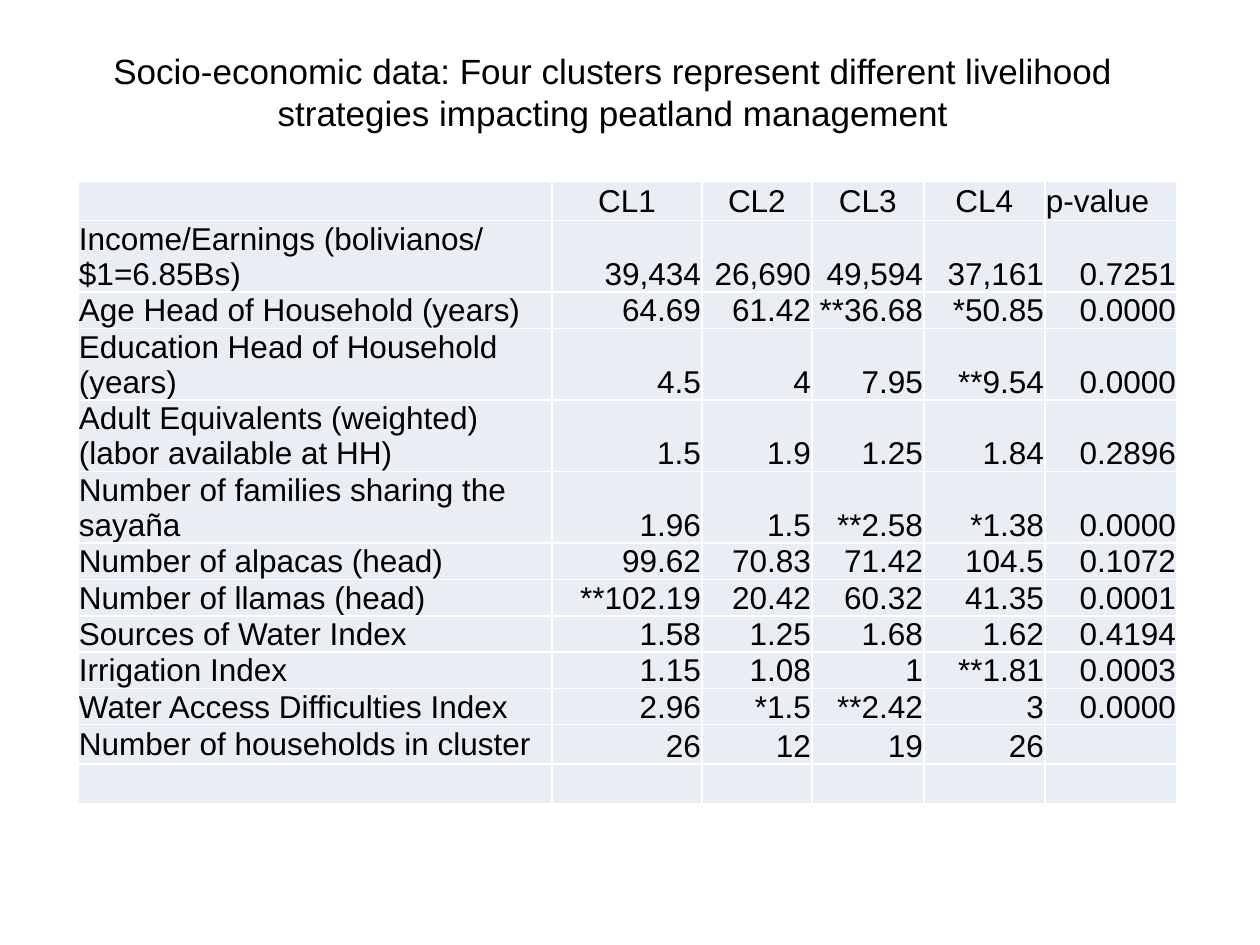
from lxml import etree
from pptx import Presentation
from pptx import util as u
from pptx.dml.color import RGBColor
from pptx.enum import text
from pptx.oxml.ns import qn

PX = 914400 // 126  # one pixel in EMU


def color(value):
    return RGBColor.from_string(value)


def format_text(para, size, align):
    para.alignment = align
    for span in para.runs:
        span.font.size = u.Pt(size)
        span.font.name = "Arial"
        span.font.color.rgb = color("000000")


deck = Presentation()
deck.slide_width, deck.slide_height = 1260 * PX, 945 * PX
page = deck.slides.add_slide(deck.slide_layouts[5])

# Title
title = page.shapes.title
title.left, title.top, title.width, title.height = 34 * PX, 0, 1158 * PX, 183 * PX
title.text_frame.text = ("Socio-economic data: Four clusters represent different "
                         "livelihood strategies impacting peatland management")
title.text_frame.vertical_anchor = text.MSO_ANCHOR.MIDDLE
format_text(title.text_frame.paragraphs[0], 20, text.PP_ALIGN.CENTER)

# Cluster data, ending with an empty row
rows = [
    ["", "CL1", "CL2", "CL3", "CL4", "p-value"],
    ["Income/Earnings (bolivianos/ $1=6.85Bs)", "39,434", "26,690", "49,594", "37,161", "0.7251"],
    ["Age Head of Household (years)", "64.69", "61.42", "**36.68", "*50.85", "0.0000"],
    ["Education Head of Household (years)", "4.5", "4", "7.95", "**9.54", "0.0000"],
    ["Adult Equivalents (weighted) (labor available at HH)", "1.5", "1.9", "1.25", "1.84", "0.2896"],
    ["Number of families sharing the sayaña", "1.96", "1.5", "**2.58", "*1.38", "0.0000"],
    ["Number of alpacas (head)", "99.62", "70.83", "71.42", "104.5", "0.1072"],
    ["Number of llamas (head)", "**102.19", "20.42", "60.32", "41.35", "0.0001"],
    ["Sources of Water Index", "1.58", "1.25", "1.68", "1.62", "0.4194"],
    ["Irrigation Index", "1.15", "1.08", "1", "**1.81", "0.0003"],
    ["Water Access Difficulties Index", "2.96", "*1.5", "**2.42", "3", "0.0000"],
    ["Number of households in cluster", "26", "12", "19", "26", ""],
    [""] * 6,
]
widths = [474, 150, 110, 112, 121, 132]
heights = [35, 71, 35, 59, 71, 59] + [35] * 7

# Table
frame = page.shapes.add_table(len(rows), len(widths), 78 * PX, 181 * PX,
                              sum(widths) * PX, sum(heights) * PX)
table = frame.table
table.first_row = table.horz_banding = False
for column, width in zip(table.columns, widths):
    column.width = width * PX
for row, height in zip(table.rows, heights):
    row.height = height * PX

for row_index, values in enumerate(rows):
    for column_index, value in enumerate(values):
        cell = table.cell(row_index, column_index)
        cell.margin_left = cell.margin_right = cell.margin_top = PX
        cell.margin_bottom = 0

        # Labels and headings sit in the middle, figures at the bottom right
        is_figure = row_index > 0 and column_index > 0
        cell.vertical_anchor = text.MSO_ANCHOR.BOTTOM if is_figure else text.MSO_ANCHOR.MIDDLE
        if is_figure:
            align = text.PP_ALIGN.RIGHT
        elif 0 < column_index < 5:
            align = text.PP_ALIGN.CENTER
        else:
            align = text.PP_ALIGN.LEFT
        cell.text_frame.text = value
        format_text(cell.text_frame.paragraphs[0], 18, align)

        # White 1 pt borders come before the fill in the cell properties
        properties = cell._tc.get_or_add_tcPr()
        for side in ("a:lnL", "a:lnR", "a:lnT", "a:lnB"):
            line = etree.SubElement(properties, qn(side), w=str(u.Pt(1)))
            line_fill = etree.SubElement(line, qn("a:solidFill"))
            etree.SubElement(line_fill, qn("a:srgbClr"), val="FFFFFF")
        cell.fill.solid()
        cell.fill.fore_color.rgb = color("E9EDF4")

frame.height = 660 * PX

deck.save("out.pptx")
